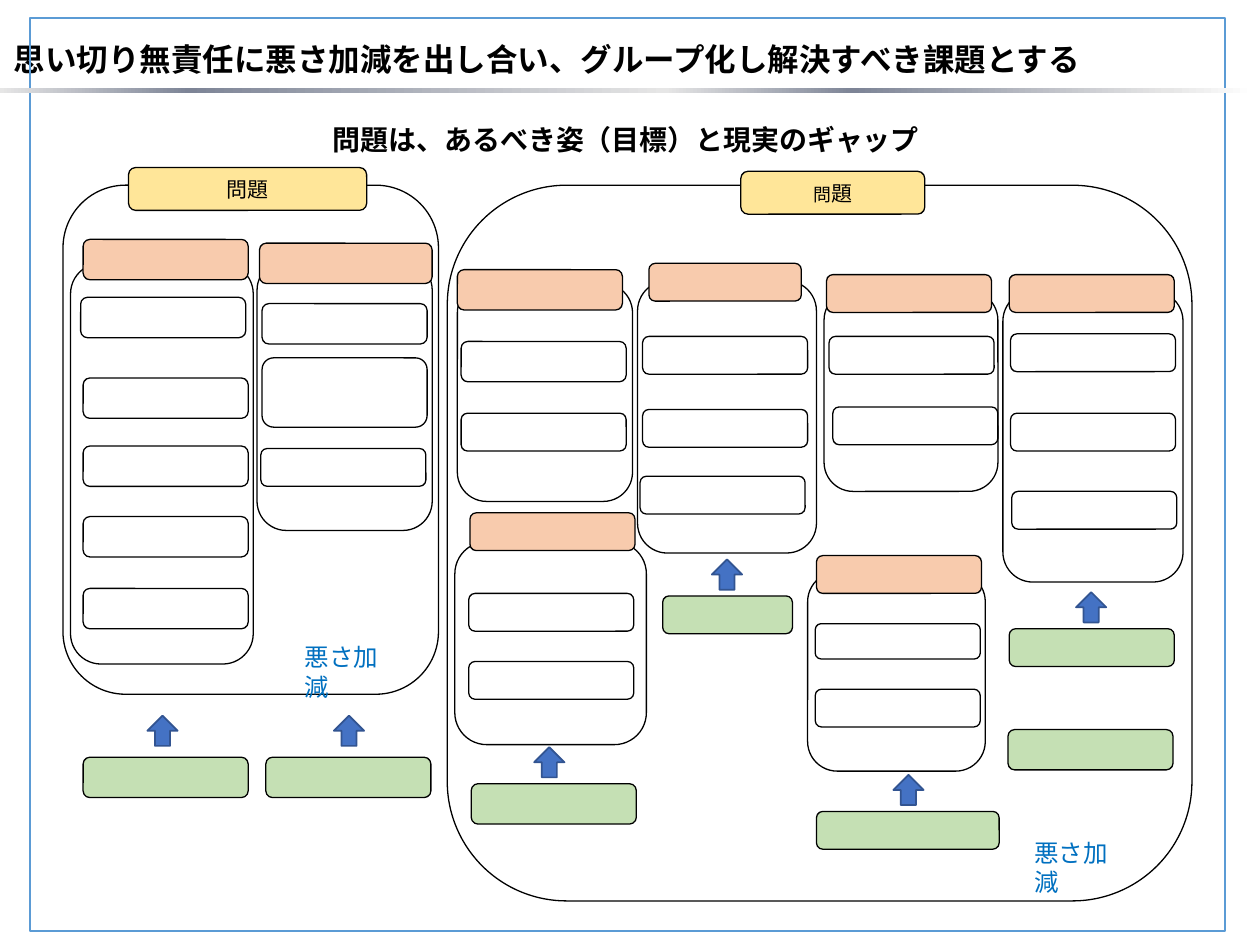
from lxml import etree
from pptx import Presentation
from pptx.dml.color import RGBColor
from pptx.enum.shapes import MSO_SHAPE as Shape
from pptx.enum.text import MSO_ANCHOR as Anchor, PP_ALIGN as Align
from pptx.oxml import parse_xml
from pptx.oxml.ns import nsdecls, qn
from pptx.util import Inches, Pt

COLORS = {
    "black": "000000", "header": "F8CBAD", "cause": "C5E0B4", "problem": "FFE699",
    "arrow": "4472C4", "arrow_edge": "325491", "border": "5B9BD5", "remark": "0070C0",
}
FONT = "Noto Sans CJK JP"

deck = Presentation()
deck.slide_width, deck.slide_height = Inches(10), Inches(7.5)
page = deck.slides.add_slide(deck.slide_layouts[5])
# The grid has 100 columns and 75 rows of square cells
CELL = deck.slide_width / 100


def add_box(area, fill=None, line="black", weight=0.75, kind=Shape.ROUNDED_RECTANGLE):
    box = page.shapes.add_shape(kind, *(round(cells * CELL) for cells in area))
    box.shadow.inherit = False
    if fill:
        box.fill.solid()
        box.fill.fore_color.rgb = RGBColor.from_string(COLORS[fill])
    else:
        box.fill.background()
    if line:
        box.line.color.rgb = RGBColor.from_string(COLORS[line])
        box.line.width = Pt(weight)
    else:
        box.line.fill.background()
    return box


def format_text(box, size, color="black", font=FONT, bold=False, align=Align.CENTER):
    box.text_frame.word_wrap = True
    for para in box.text_frame.paragraphs:
        para.alignment = align
        for span in para.runs:
            span.font.size, span.font.bold, span.font.name = Pt(size), bold, font
            span.font.color.rgb = RGBColor.from_string(COLORS[color])
            east_asian = etree.SubElement(span.font._element, qn("a:ea"))
            east_asian.set("typeface", FONT)


# Outer frames of the two problems
for area in [(5, 14.7, 29.8, 40.4), (35.5, 14.7, 59.1, 56.8)]:
    add_box(area)

# Groups: frame, header, then left, top and height of each note
NOTE_WIDTH = 13.1
groups = [
    ((5.6, 20.9, 14.5, 31.8), (6.6, 19, 13.1, 3.2),
     [(6.4, 23.6, 3.2), (6.6, 30, 3.2), (6.6, 35.4, 3.2), (6.6, 41, 3.2), (6.6, 46.7, 3.2)]),
    ((20.4, 20.7, 13.9, 21.4), (20.6, 19.3, 13.7, 3.2),
     [(20.8, 24.1, 3.2), (20.8, 28.4, 5.5), (20.7, 35.6, 3)]),
    ((36.3, 22.5, 13.9, 17.3), (36.3, 21.4, 13.1, 3.2),
     [(36.6, 27.1, 3.2), (36.6, 32.8, 3)]),
    ((36.1, 43, 15.2, 16.1), (37.3, 40.7, 13.1, 3),
     [(37.2, 47.1, 3), (37.2, 52.5, 3)]),
    ((50.6, 22.3, 14.2, 21.6), (51.5, 20.9, 12.1, 3),
     [(51, 26.7, 3), (51, 32.5, 3), (50.8, 37.8, 3)]),
    ((65.4, 23.1, 13.8, 15.9), (65.6, 21.8, 13.1, 3),
     [(65.8, 26.7, 3), (66.1, 32.3, 3)]),
    ((64.1, 45.4, 14.1, 15.8), (64.8, 44.1, 13.1, 3),
     [(64.7, 49.5, 2.8), (64.7, 54.7, 3)]),
    ((79.6, 23.1, 14.3, 23.1), (80.1, 21.8, 13.1, 3),
     [(80.2, 26.5, 3), (80.2, 32.8, 3), (80.3, 39, 3)]),
]
for frame, header, notes in groups:
    add_box(frame)
    add_box(header, "header")
    for left, top, height in notes:
        add_box((left, top, NOTE_WIDTH, height))

# Causes below the groups
for area in [(6.6, 60.1, 13.1, 3.2), (21.1, 60.1, 13.1, 3.2), (37.4, 62.2, 13.1, 3.2),
             (52.6, 47.3, 10.3, 3), (64.8, 64.4, 14.5, 3), (80.1, 49.9, 13.1, 3),
             (80, 57.9, 13.1, 3.2)]:
    add_box(area, "cause")

# Arrows from the causes up to the groups
for left, top in [(11.7, 56.8), (26.5, 56.8), (42.4, 59.3), (56.5, 44.4),
                  (70.9, 61.5), (85.4, 47)]:
    add_box((left, top, 2.4, 2.4), "arrow", "arrow_edge", 1, Shape.UP_ARROW)

# Problem labels
for area, words, first_size in [((10.2, 13.3, 18.9, 3.4), ["問題"], 12),
                                ((58.8, 13.6, 14.6, 3.4), ["問", "題"], 10.2)]:
    label = add_box(area, "problem")
    for word in words:
        label.text_frame.paragraphs[0].add_run().text = word
    format_text(label, 12)
    label.text_frame.paragraphs[0].runs[0].font.size = Pt(first_size)

# Page border
add_box((2.4, 1.4, 94.8, 72.5), None, "border", 1, Shape.RECTANGLE)

# Gradient rule under the title
rule = add_box((0, 7, 99.6, 0.4), None, None, kind=Shape.RECTANGLE)
stops = [(0, "FFFFFF"), (7, "E6E6E6"), (32, "7D8496"),
         (47, "E6E6E6"), (85, "7D8496"), (100, "E6E6E6")]
stop_xml = "".join(f'<a:gs pos="{share * 1000}"><a:srgbClr val="{tint}"/></a:gs>'
                   for share, tint in stops)
plain_fill = rule._element.spPr.find(qn("a:noFill"))
plain_fill.getparent().replace(plain_fill, parse_xml(
    f'<a:gradFill {nsdecls("a")}><a:gsLst>{stop_xml}</a:gsLst>'
    '<a:lin ang="10800000" scaled="0"/></a:gradFill>'))

# Subtitle and remarks
texts = [
    ((3.1, 9.2, 93.2, 3.7), "問題は、あるべき姿（目標）と現実のギャップ", 16, "black", FONT, True, Align.CENTER),
    ((23.2, 50.5, 9.4, 3.4), "悪さ加減", 14, "remark", "Calibri", False, Align.LEFT),
    ((81.1, 66, 9.4, 3.4), "悪さ加減", 14, "remark", "Calibri", False, Align.LEFT),
]
for area, words, *style in texts:
    box = page.shapes.add_textbox(*(round(cells * CELL) for cells in area))
    box.text_frame.text = words
    format_text(box, *style)

# Title
title = page.shapes.title
title.left, title.top, title.width, title.height = (
    round(cells * CELL) for cells in (0, 2.7, 97.2, 4))
title.text_frame.text = "思い切り無責任に悪さ加減を出し合い、グループ化し解決すべき課題とする"
title.text_frame.vertical_anchor = Anchor.TOP
title.text_frame.margin_left = round(1.1 * CELL)
format_text(title, 18, bold=True, align=Align.LEFT)

deck.save("out.pptx")
